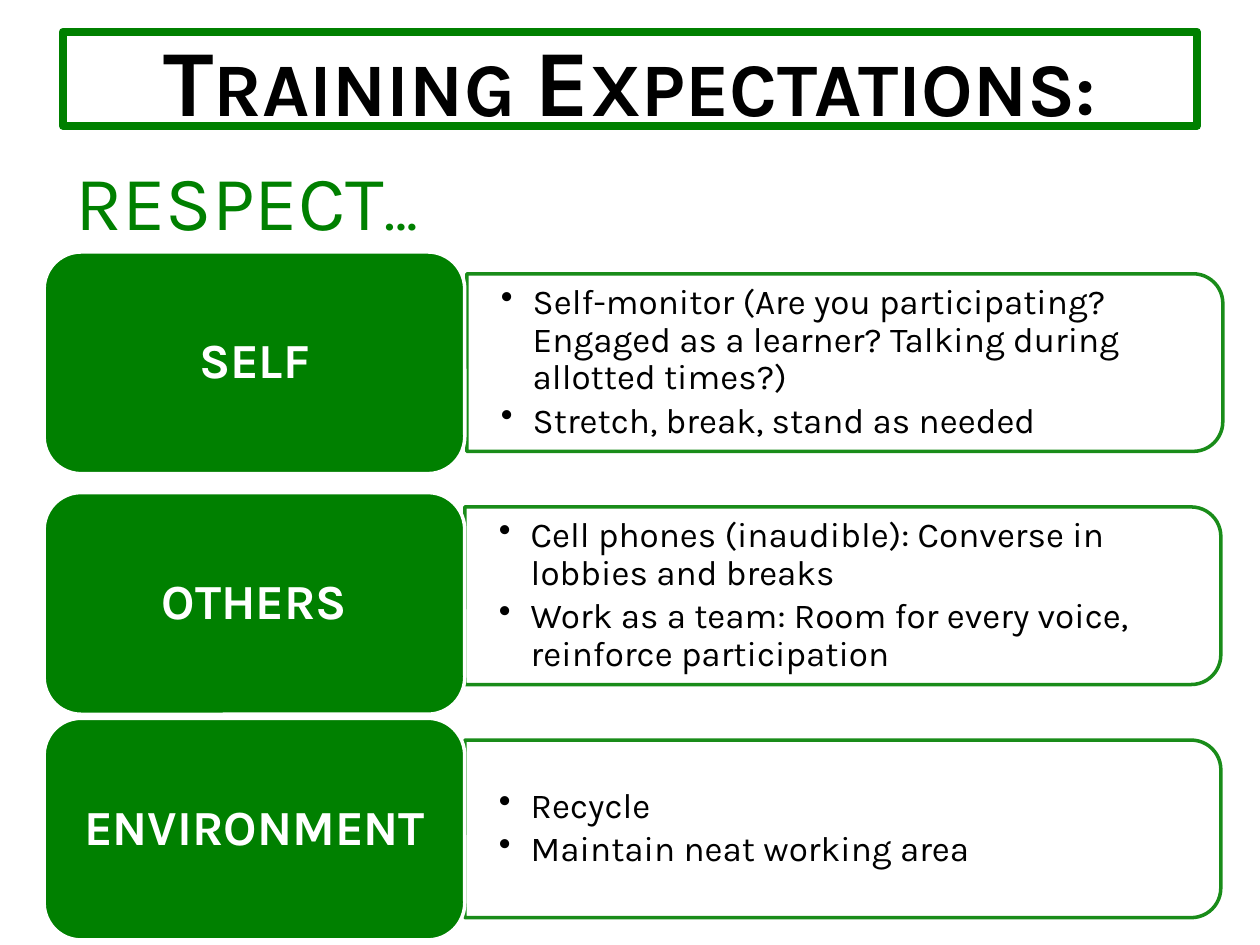
from lxml import etree
from pptx import Presentation
from pptx.dml.color import RGBColor
from pptx.enum.shapes import MSO_SHAPE
from pptx.enum.text import MSO_ANCHOR, MSO_AUTO_SIZE, PP_ALIGN
from pptx.oxml.ns import qn
from pptx.util import Cm, Pt

GREEN = RGBColor(0x00, 0x80, 0x00)
WHITE = RGBColor(0xFF, 0xFF, 0xFF)
BLACK = RGBColor(0x00, 0x00, 0x00)
RECT, ROUNDED = MSO_SHAPE.RECTANGLE, MSO_SHAPE.ROUNDED_RECTANGLE
ROUND_TOP = MSO_SHAPE.ROUND_2_SAME_RECTANGLE
MIDDLE, CENTER, LEFT = MSO_ANCHOR.MIDDLE, PP_ALIGN.CENTER, PP_ALIGN.LEFT
FIT_SHAPE = MSO_AUTO_SIZE.SHAPE_TO_FIT_TEXT

# Label top, panel left and top (cm), label, bullets
ROWS = [
    (5.08, 9.41, 5.52, "SELF", [
        "Self-monitor (Are you participating? Engaged as a learner? "
        "Talking during allotted times?)",
        "Stretch, break, stand as needed"]),
    (9.93, 9.37, 10.22, "OTHERS", [
        "Cell phones (inaudible): Converse in lobbies and breaks",
        "Work as a team: Room for every voice, reinforce participation"]),
    (14.48, 9.37, 14.92, "ENVIRONMENT", [
        "Recycle",
        "Maintain neat working area"]),
]


def add_box(s, kind, box, line, width, fill=None):
    sp = s.shapes.add_shape(kind, *(Cm(v) for v in box))
    sp.shadow.inherit = False
    if fill is None:
        sp.fill.background()
    else:
        sp.fill.solid()
        sp.fill.fore_color.rgb = fill
    sp.line.color.rgb = line
    sp.line.width = Pt(width)
    return sp


def add_text_box(s, box, inset_x, inset_y):
    sp = s.shapes.add_textbox(*(Cm(v) for v in box))
    tf = sp.text_frame
    frame = {"word_wrap": True, "vertical_anchor": MIDDLE,
             "margin_left": Cm(inset_x), "margin_right": Cm(inset_x),
             "margin_top": Cm(inset_y), "margin_bottom": Cm(inset_y)}
    for name, value in frame.items():
        setattr(tf, name, value)
    return tf


def write(p, text, size, color, bold=False, align=LEFT, small_caps=False):
    p.alignment = align
    r = p.add_run()
    r.text = text
    for name, value in {"name": "Karla", "size": Pt(size), "bold": bold}.items():
        setattr(r.font, name, value)
    r.font.color.rgb = color
    if small_caps:
        r.font._element.set("cap", "small")


def add_bullet(p):
    pPr = p._p.get_or_add_pPr()
    pPr.set("marL", str(Cm(0.64)))
    pPr.set("indent", str(-Cm(0.64)))
    etree.SubElement(pPr, qn("a:buChar")).set("char", "•")


def add_title(s, left, top, width, height):
    sp = add_box(s, RECT, (left, top, width, height), GREEN, 4.5)
    tf = sp.text_frame
    tf.word_wrap = True
    tf.vertical_anchor = MIDDLE
    write(tf.paragraphs[0], "Training Expectations:", 54, BLACK, True, CENTER, True)


def add_heading(s, left, top, width, height):
    tf = s.shapes.add_textbox(Cm(left), Cm(top), Cm(width), Cm(height)).text_frame
    tf.word_wrap = False
    tf.auto_size = FIT_SHAPE
    write(tf.paragraphs[0], "RESPECT…", 44, GREEN, small_caps=True)


def add_panel(s, left, top, width, height, bullets):
    # The shape is turned a quarter so its round corners face right
    box = (left + (width - height) / 2, top - (width - height) / 2, height, width)
    sp = add_box(s, ROUND_TOP, box, GREEN, 2)
    sp.rotation = 90
    color = sp.line._ln.find(".//" + qn("a:srgbClr"))
    etree.SubElement(color, qn("a:alpha")).set("val", "90000")

    tf = add_text_box(s, (left, top + 0.17, width - 0.18, height - 0.35), 0.69, 0.36)
    for i, text in enumerate(bullets):
        p = tf.add_paragraph() if i else tf.paragraphs[0]
        p.line_spacing = 0.9
        p.space_after = Pt(3)
        add_bullet(p)
        write(p, text, 20, BLACK)


def add_label(s, left, top, width, height, text):
    add_box(s, ROUNDED, (left, top, width, height), WHITE, 2, GREEN)
    pad = 0.22
    box = (left + pad, top + pad, width - 2 * pad, height - 2 * pad)
    p = add_text_box(s, box, 0.3, 0.15).paragraphs[0]
    p.line_spacing = 0.9
    write(p, text, 28, WHITE, True, CENTER)


def main():
    prs = Presentation()
    prs.slide_width, prs.slide_height = Cm(25.4), Cm(19.05)
    s = prs.slides.add_slide(prs.slide_layouts[6])

    # Rows of respect: bullets on the right, label on the left
    for label_top, panel_left, panel_top, label, bullets in ROWS:
        add_panel(s, panel_left, panel_top, 15.24, 3.58, bullets)
        add_label(s, 0.89, label_top, 8.48, 4.47, label)

    # Title and heading
    add_title(s, 1.27, 0.64, 22.86, 1.9)
    add_heading(s, 1.27, 2.97, 7.87, 2.13)

    prs.save("out.pptx")


if __name__ == "__main__":
    main()
